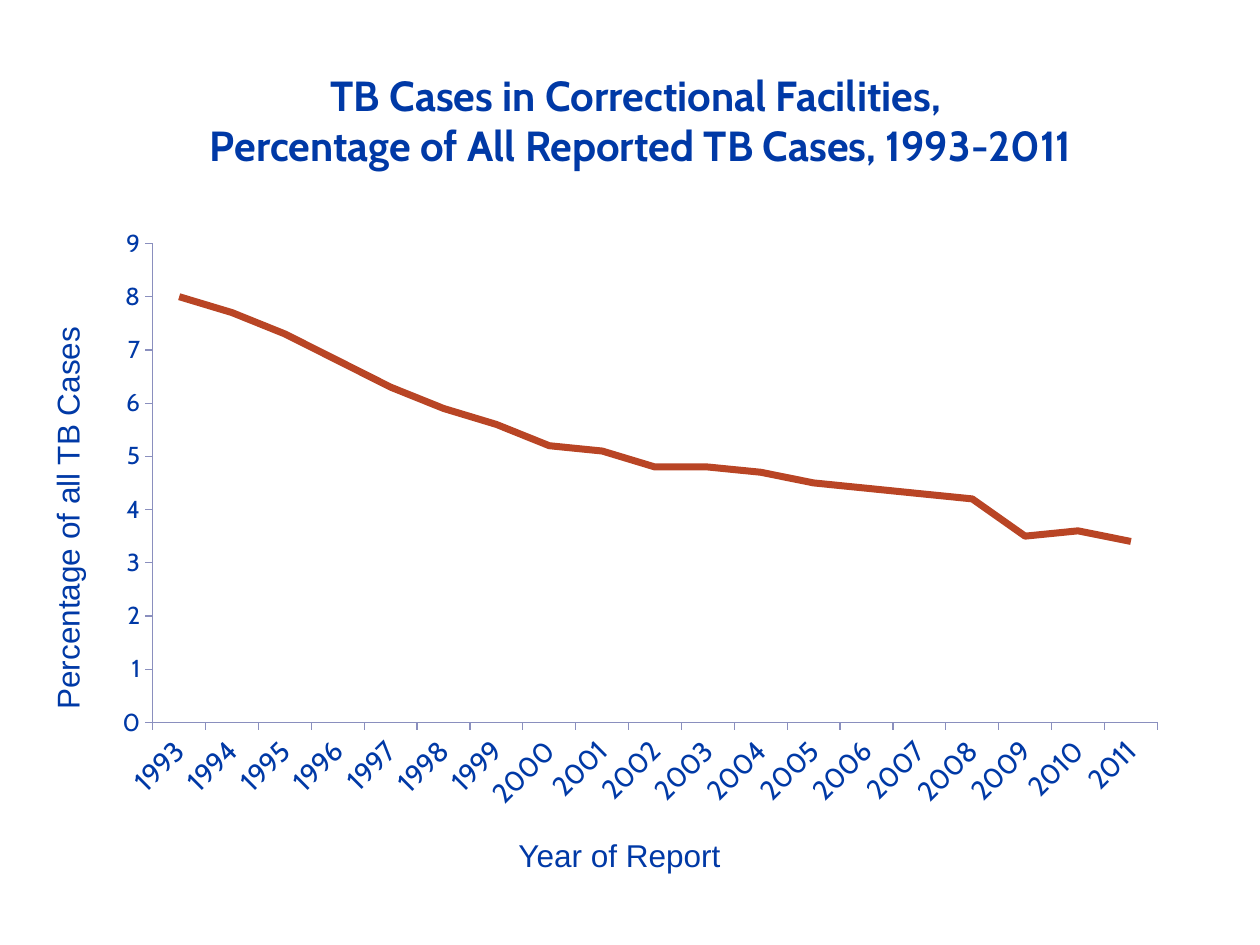
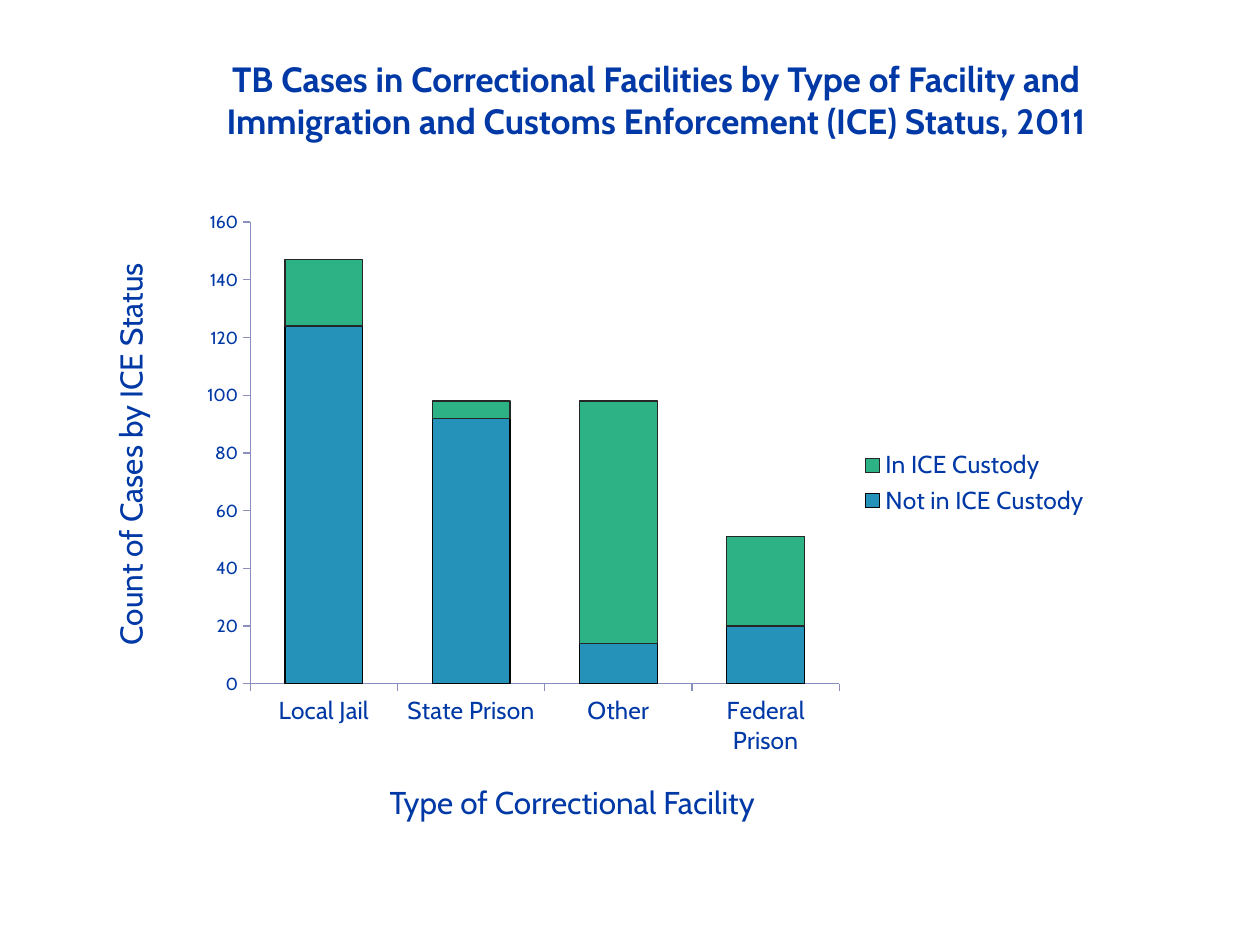
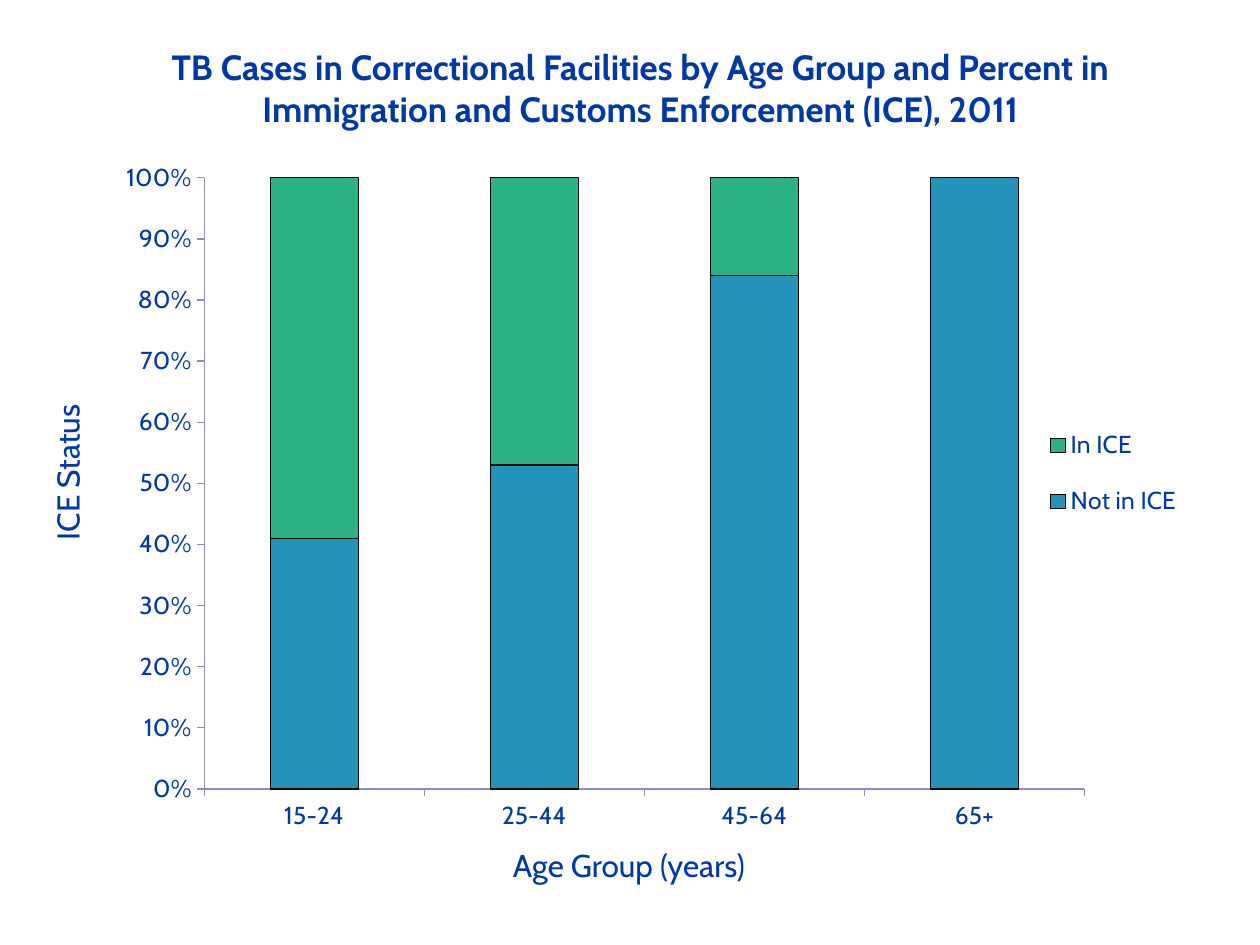
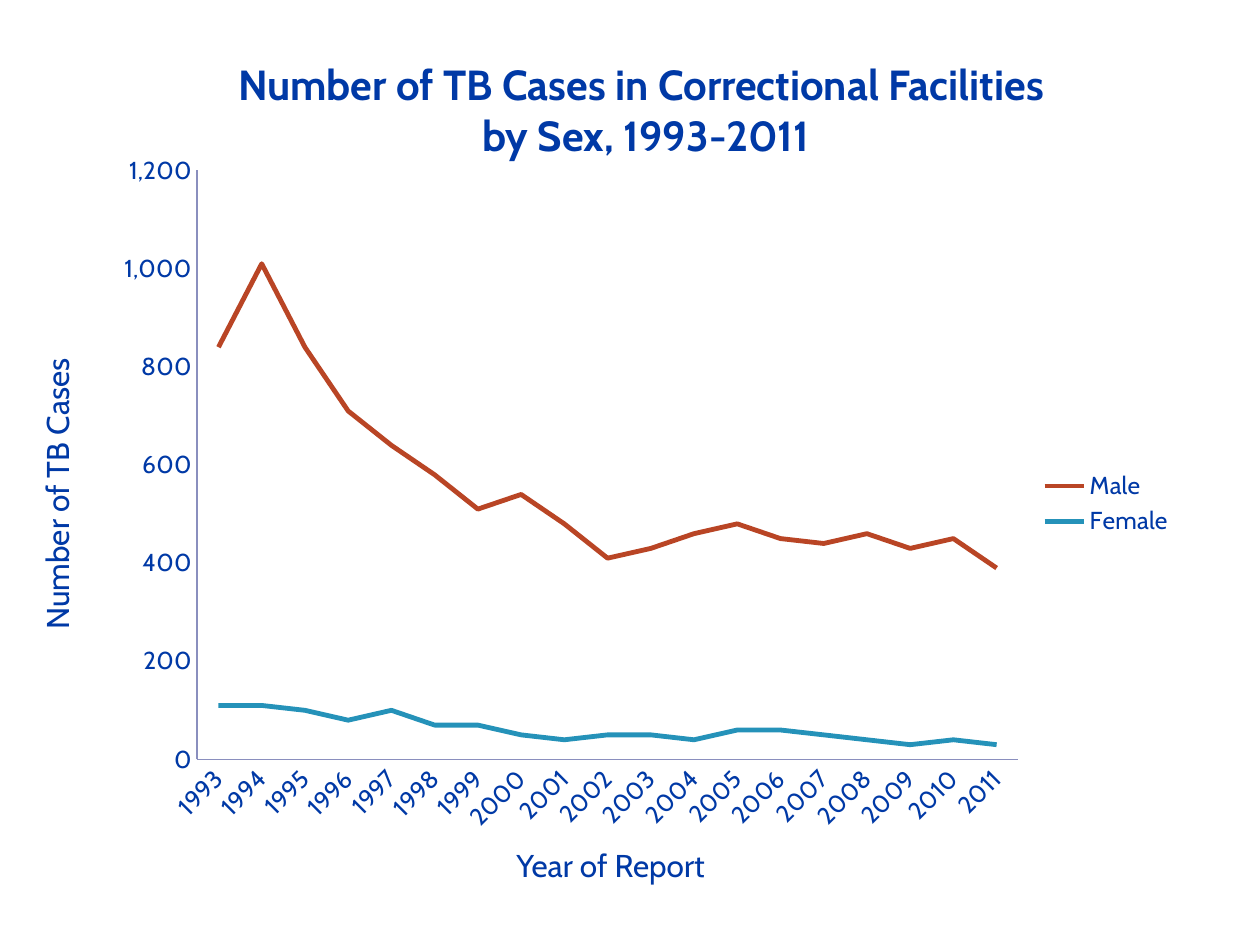
import pptx
import pptx.chart.data
import pptx.dml.color
import pptx.enum.chart
import pptx.enum.text
import pptx.oxml
import pptx.oxml.ns
import pptx.util

# Shared look
BLUE, AXIS = "0039A6", "8A8FBE"
RUST, TEAL, GREEN = "B94525", "2592B9", "2CB285"
EDGE = "060606"
FACE = "Cabin"
YEARS = [str(year) for year in range(1993, 2012)]

# The slide is a grid of 120 columns by 90 rows
WIDE, HIGH = 10, 7.5
COLS, ROWS = 120, 90

qn = pptx.oxml.ns.qn
KIND = pptx.enum.chart.XL_CHART_TYPE
TICK = pptx.enum.chart.XL_TICK_MARK
ALIGN = pptx.enum.text.PP_ALIGN


def grid(left, top, width, height):
    """Turn columns and rows into slide lengths."""
    col, row = WIDE / COLS, HIGH / ROWS
    return [pptx.util.Inches(part * unit) for part, unit in
            zip((left, top, width, height), (col, row, col, row))]


def color(code):
    return pptx.dml.color.RGBColor.from_string(code)


def style(font, size, face=FACE, bold=False):
    font.name, font.size, font.bold = face, pptx.util.Pt(size), bold
    font.color.rgb = color(BLUE)


def stroke(line, code, width=0.75):
    line.color.rgb = color(code)
    line.width = pptx.util.Pt(width)


def write(frame, text, size=18, face=FACE, bold=False, align=ALIGN.CENTER,
          wrap=True):
    """Fill a frame, one paragraph for each line of text."""
    frame.word_wrap = wrap
    frame.auto_size = pptx.enum.text.MSO_AUTO_SIZE.NONE
    frame.vertical_anchor = pptx.enum.text.MSO_ANCHOR.TOP
    for i, line in enumerate(text.split("\n")):
        para = frame.paragraphs[0] if i == 0 else frame.add_paragraph()
        para.alignment = align
        run = para.add_run()
        run.text = line
        style(run.font, size, face, bold)


def start(deck, text, spot, size):
    """Add a slide with its title."""
    slide = deck.slides.add_slide(deck.slide_layouts[5])
    title = slide.shapes.title
    title.left, title.top, title.width, title.height = grid(*spot)
    write(title.text_frame, text, size=size, bold=True)
    return slide


def label(slide, text, spot, upright=False, **form):
    """Name an axis; upright text reads from bottom to top."""
    box = slide.shapes.add_textbox(*grid(*spot))
    if upright:
        box.element.txBody.bodyPr.set("vert", "vert270")
    write(box.text_frame, text, **form)


def place(chart, tag, index, share):
    """Fix the plot or legend to shares of the chart's size."""
    host = chart.element.find(".//" + qn(tag))
    old = host.find(qn("c:layout"))
    if old is not None:
        host.remove(old)
    inner = '<c:layoutTarget val="inner"/>' if tag == "c:plotArea" else ""
    modes = "".join(f'<c:{k}Mode val="edge"/>' for k in "xy")
    sizes = "".join(f'<c:{k} val="{v}"/>' for k, v in zip("xywh", share))
    host.insert(index, pptx.oxml.parse_xml(
        f'<c:layout {pptx.oxml.ns.nsdecls("c")}><c:manualLayout>'
        f'{inner}{modes}{sizes}</c:manualLayout></c:layout>'))


def scale(axis, size, tick):
    axis.has_major_gridlines = False
    axis.major_tick_mark, axis.minor_tick_mark = tick, TICK.NONE
    stroke(axis.format.line, AXIS)
    style(axis.tick_labels.font, size)


def draw(slide, kind, spot, cats, series, area, sizes=(14, 14),
         tick=TICK.OUTSIDE, top=None, step=None, form="General"):
    """Add a chart; each series is a name and its values."""
    data = pptx.chart.data.CategoryChartData()
    data.categories = cats
    for name, vals in series:
        data.add_series(name, vals)
    chart = slide.shapes.add_chart(kind, *grid(*spot), data).chart
    style(chart.font, 10)
    chart.has_title = False
    scale(chart.category_axis, sizes[0], tick)
    axis = chart.value_axis
    scale(axis, sizes[1], tick)
    axis.minimum_scale = 0
    if top:
        axis.maximum_scale, axis.major_unit = top, step
    axis.tick_labels.number_format = form
    axis.tick_labels.number_format_is_linked = False
    place(chart, "c:plotArea", 0, area)
    chart.plots[0].vary_by_categories = False
    chart.has_legend = len(series) > 1
    if chart.has_legend:
        chart.legend.position = pptx.enum.chart.XL_LEGEND_POSITION.RIGHT
        chart.legend.include_in_layout = False
        style(chart.legend.font, 14)
    return chart


def trend(slide, spot, series, area, width, **form):
    """Line chart over the years, with slanted year labels."""
    chart = draw(slide, KIND.LINE, spot, YEARS, series, area, **form)
    for line, code in zip(chart.plots[0].series, (RUST, TEAL)):
        line.smooth = False
        stroke(line.format.line, code, width)
    steps = ("c:catAx", "c:txPr", "a:bodyPr")
    body = chart.element.find(".//" + "/".join(map(qn, steps)))
    body.set("rot", "-2700000")
    body.set("vert", "horz")


def stack(slide, kind, spot, cats, series, area, gap, edges=(EDGE, EDGE),
          **form):
    """Stacked columns with thin dark edges."""
    chart = draw(slide, kind, spot, cats, series, area, **form)
    plot = chart.plots[0]
    plot.gap_width, plot.overlap = gap, 100
    for bar, code, edge in zip(plot.series, (TEAL, GREEN), edges):
        bar.format.fill.solid()
        bar.format.fill.fore_color.rgb = color(code)
        stroke(bar.format.line, edge)
    return chart


def share(deck):
    slide = start(deck, "TB Cases in Correctional Facilities, \n"
                  "Percentage of All Reported TB Cases, 1993-2011",
                  (9, 6, 104, 11), 24)
    vals = [8, 7.7, 7.3, 6.8, 6.3, 5.9, 5.6, 5.2, 5.1, 4.8,
            4.8, 4.7, 4.5, 4.4, 4.3, 4.2, 3.5, 3.6, 3.4]
    trend(slide, (8, 11, 104, 67), [("Series 1", vals)],
          (0.063, 0.182, 0.92, 0.681), 4, sizes=(16, 14), top=9, step=1)
    label(slide, "Year of Report", (44, 79, 30, 4.8), face="Arial")
    label(slide, "Percentage of all TB Cases", (4, 14.9, 6, 68.9),
          upright=True, face="Arial")


def place_type(deck):
    slide = start(deck, "TB Cases in Correctional Facilities by Type of "
                  "Facility and Immigration and Customs Enforcement (ICE) "
                  "Status, 2011", (13, 4.9, 99, 9.2), 20)
    stack(slide, KIND.COLUMN_STACKED, (18, 19, 87, 54),
          ["Local Jail", "State Prison", "Other", "Federal Prison"],
          [("Not in ICE Custody", [124, 92, 14, 20]),
           ("In ICE Custody", [23, 6, 84, 31])],
          (0.067, 0.04, 0.645, 0.814), 89, edges=(EDGE, "262626"),
          sizes=(14, 10), top=160, step=20)
    label(slide, "Count of Cases by ICE Status", (10, 9.4, 6, 67.7),
          upright=True)
    label(slide, "Type of Correctional Facility", (22, 74, 65, 4.8))


def ages(deck):
    slide = start(deck, "TB Cases in Correctional Facilities by Age Group "
                  "and Percent in Immigration and Customs Enforcement "
                  "(ICE), 2011", (12, 3.7, 98, 9.2), 20)
    chart = stack(slide, KIND.COLUMN_STACKED_100, (8, 15.5, 106, 65.6),
                  ["15-24", "25-44", "45-64", "65+"],
                  [("Not in ICE", [41, 53, 84, 100]),
                   ("In ICE", [59, 47, 16, 0])],
                  (0.108, 0.02, 0.791, 0.889), 150, form="0%")
    place(chart, "c:legend", 1, (0.86, 0.35, 0.13, 0.2))
    label(slide, "Age Group (years)", (28.9, 80, 62, 4.8))
    label(slide, "ICE Status", (4, 29, 6, 32), upright=True)


def sexes(deck):
    slide = start(deck, "Number of TB Cases in Correctional Facilities \n"
                  "by Sex, 1993-2011", (16, 5, 91, 11), 24)
    male = [840, 1010, 840, 710, 640, 580, 510, 540, 480, 410,
            430, 460, 480, 450, 440, 460, 430, 450, 390]
    female = [110, 110, 100, 80, 100, 70, 70, 50, 40, 50,
              50, 40, 60, 60, 50, 40, 30, 40, 30]
    trend(slide, (11, 14.8, 102, 66.2), [("Male", male), ("Female", female)],
          (0.076, 0.02, 0.767, 0.849), 2.75, tick=TICK.NONE,
          top=1200, step=200, form="#,##0")
    label(slide, "Year of Report", (48, 80, 20.9, 4.8), align=ALIGN.LEFT,
          wrap=False)
    label(slide, "Number of TB Cases", (3, 11.9, 6, 70.3), upright=True)


def main():
    deck = pptx.Presentation()
    deck.slide_width = pptx.util.Inches(WIDE)
    deck.slide_height = pptx.util.Inches(HIGH)
    for build in (share, place_type, ages, sexes):
        build(deck)
    deck.save("out.pptx")


if __name__ == "__main__":
    main()
